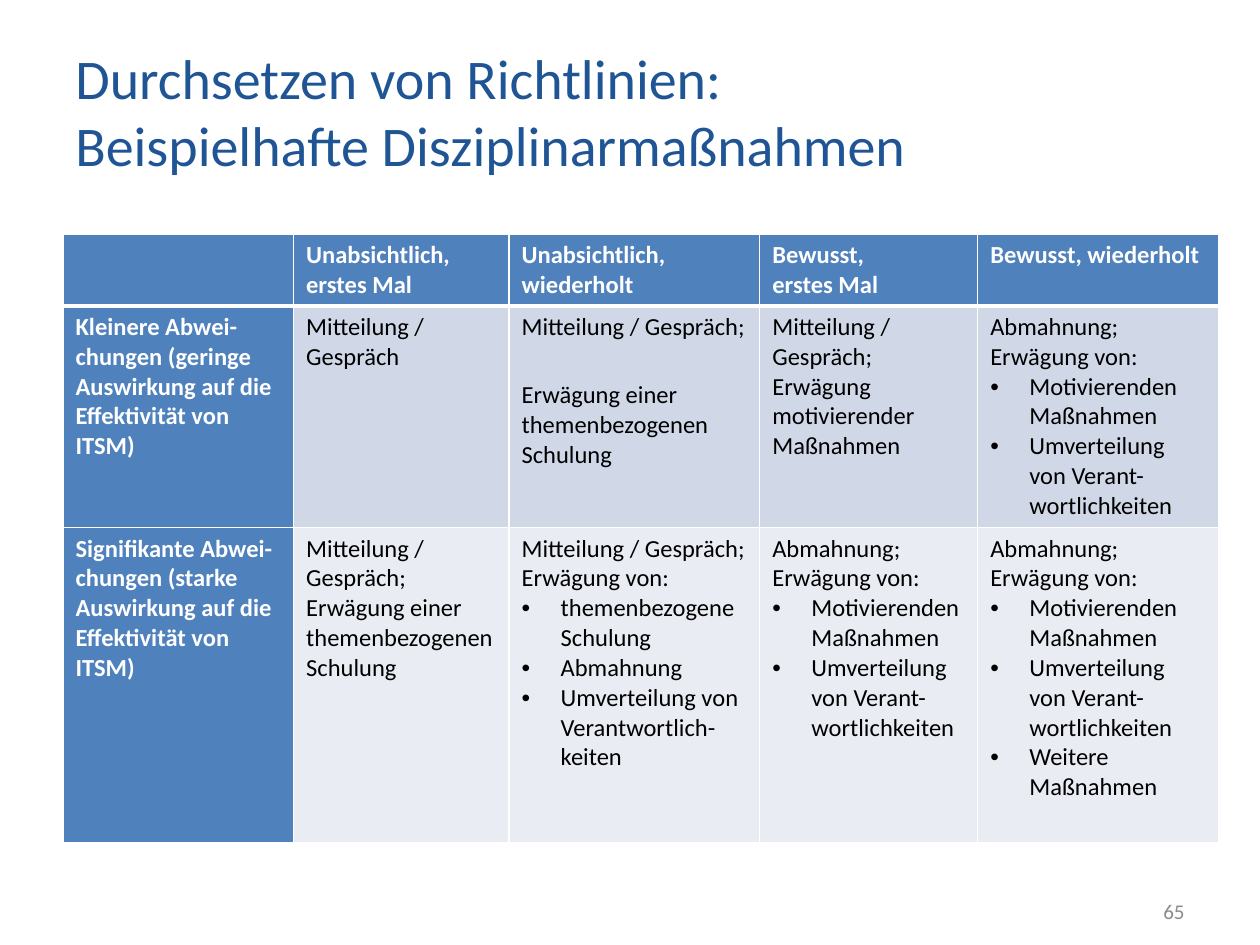
from lxml import etree
from pptx import Presentation
from pptx.dml.color import RGBColor
from pptx.enum.text import MSO_ANCHOR, PP_ALIGN
from pptx.oxml.ns import qn
from pptx.util import Inches, Pt

MIDDLE = MSO_ANCHOR.MIDDLE
LEFT, RIGHT = PP_ALIGN.LEFT, PP_ALIGN.RIGHT

THEME = {
    "line": "FFFFFF",
    "head": "4F81BD",
    "rows": ["4F81BD", "D0D8E7", "E9ECF3"],
    "title": {"size": Pt(32), "name": "Calibri", "bold": False, "color": "205595"},
    "label": {"size": Pt(14), "name": "Calibri", "bold": True, "color": "FFFFFF"},
    "body": {"size": Pt(14), "name": "Calibri", "bold": False, "color": "000000"},
    "number": {"size": Pt(12), "name": "Calibri", "bold": False, "color": "8B8B8B"},
}


def write(frame, lines, style):
    for i, line in enumerate(lines):
        para = frame.paragraphs[0] if i == 0 else frame.add_paragraph()
        para.text = line.removeprefix("• ")
        if line.startswith("• "):
            props = para._p.get_or_add_pPr()
            props.set("marL", str(Inches(0.31)))
            props.set("indent", str(-Inches(0.31)))
            etree.SubElement(props, qn("a:buFont")).set("typeface", "Arial")
            etree.SubElement(props, qn("a:buChar")).set("char", "•")
        for run in para.runs:
            for key, value in THEME[style].items():
                if key == "color":
                    run.font.color.rgb = RGBColor.from_string(value)
                else:
                    setattr(run.font, key, value)


def edge(cell, widths):
    props = cell._tc.get_or_add_tcPr()
    for i, (side, width) in enumerate(widths.items()):
        line = etree.Element(qn("a:ln" + side), w=str(Pt(width)))
        fill = etree.SubElement(line, qn("a:solidFill"))
        etree.SubElement(fill, qn("a:srgbClr"), val=THEME["line"])
        props.insert(i, line)


deck = Presentation()
deck.slide_width, deck.slide_height = Inches(10), Inches(7.5)
slide = deck.slides.add_slide(deck.slide_layouts[6])

texts = [
    ("Durchsetzen von Richtlinien: \vBeispielhafte Disziplinarmaßnahmen",
     (0.5, 0.3, 8.04, 1.15), "title", LEFT),
    ("65", (7.17, 7.03, 2.33, 0.4), "number", RIGHT),
]
for text, place, style, align in texts:
    frame = slide.shapes.add_textbox(*map(Inches, place)).text_frame
    for key, value in {"word_wrap": True, "vertical_anchor": MIDDLE}.items():
        setattr(frame, key, value)
    write(frame, [text], style)
    frame.paragraphs[0].alignment = align

warn = "Abmahnung; Erwägung von:"
talk = "Mitteilung / Gespräch; "
train = "\vErwägung einer themenbezogenen Schulung"
steps = ["• Motivierenden Maßnahmen", "• Umverteilung von Verant-wortlichkeiten"]
level = "{} Abwei-chungen ({} Auswirkung auf die Effektivität von ITSM)"
grid = [
    [[], ["Unabsichtlich, \verstes Mal"], ["Unabsichtlich, wiederholt"],
     ["Bewusst,\verstes Mal"], ["Bewusst, wiederholt"]],
    [[level.format("Kleinere", "geringe")], ["Mitteilung / Gespräch"], [talk + train],
     [talk + "Erwägung motivierender Maßnahmen"], [warn, *steps]],
    [[level.format("Signifikante", "starke")], [talk + train],
     [talk + "Erwägung von:", "• themenbezogene Schulung", "• Abmahnung",
      "• Umverteilung von Verantwortlich-keiten"],
     [warn, *steps], [warn, *steps, "• Weitere Maßnahmen"]],
]
widths = [1.83, 1.71, 1.99, 1.73, 1.91]
heights = [0.56, 1.76, 2.5]
table = slide.shapes.add_table(
    len(heights), len(widths), Inches(0.5), Inches(1.86),
    Inches(sum(widths)), Inches(sum(heights))).table
for col, width in zip(table.columns, widths):
    col.width = Inches(width)
for row, height in zip(table.rows, heights):
    row.height = Inches(height)

for r, row in enumerate(grid):
    for c, lines in enumerate(row):
        cell = table.cell(r, c)
        label = r == 0 or c == 0
        cell.fill.solid()
        color = THEME["head"] if label else THEME["rows"][r]
        cell.fill.fore_color.rgb = RGBColor.from_string(color)
        edge(cell, {"L": 0.96, "R": 0.96, "T": 3 if r == 1 else 0.96, "B": 3 if r == 0 else 0.96})
        write(cell.text_frame, lines, "label" if label else "body")

deck.save("out.pptx")
